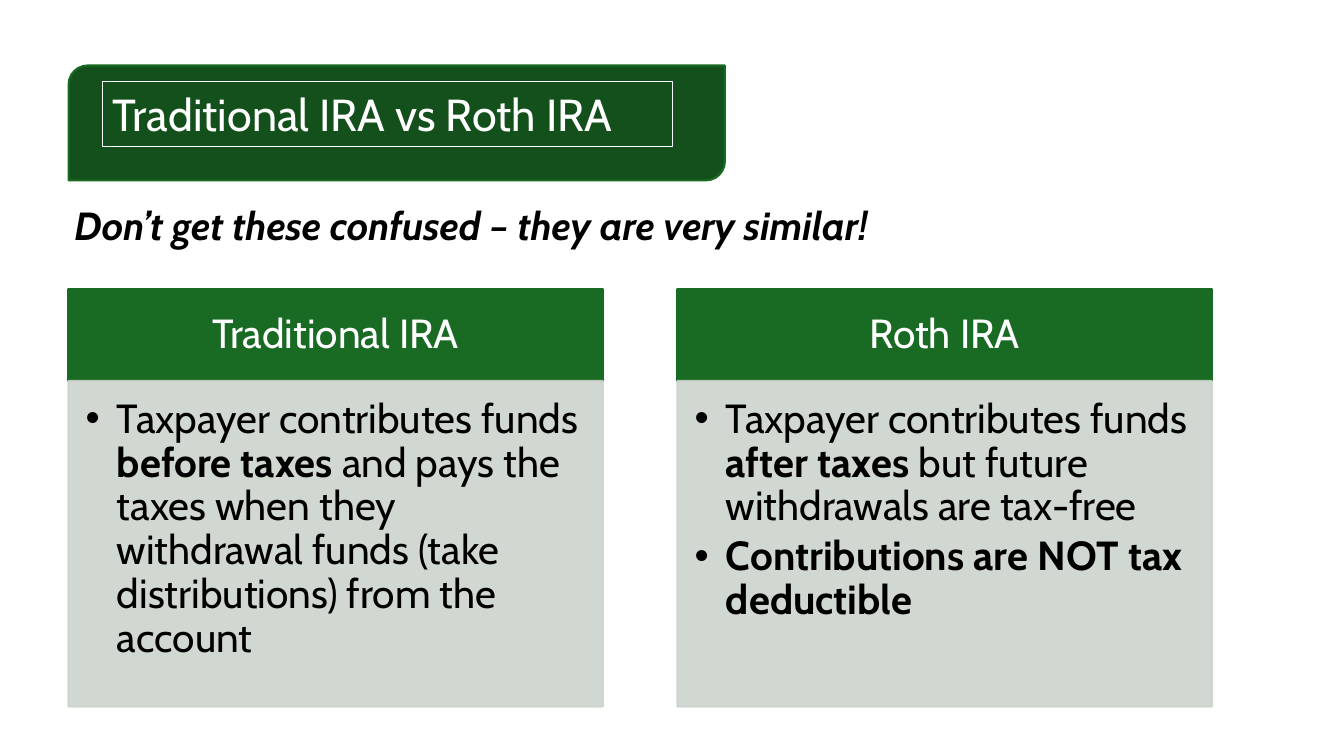
"""Build a slide comparing traditional and Roth IRA accounts."""
from lxml import etree
from pptx import Presentation
from pptx.dml.color import RGBColor
from pptx.enum.shapes import MSO_SHAPE as Preset
from pptx.enum.text import MSO_ANCHOR as Anchor, MSO_AUTO_SIZE as AutoSize, PP_ALIGN as Align
from pptx.oxml.ns import qn
from pptx.util import Emu, Pt

PX = 9144
FONT = "Cabin"
WHITE, BLACK = "FFFFFF", "000000"
DARK_GREEN, GREEN, PALE_GREEN = "13501B", "196B24", "CCD4CD"
COLUMN_LEFT, COLUMN_STEP, COLUMN_WIDTH = 68, 604, 530
HEADER_TOP, HEADER_HEIGHT, PANEL_HEIGHT = 287, 91, 323

COLUMNS = [
    ("Traditional IRA", [
        [("Taxpayer contributes funds ", False), ("before taxes ", True),
         ("and pays the taxes when they withdrawal funds "
          "(take distributions) from the account", False)],
    ]),
    ("Roth IRA", [
        [("Taxpayer contributes funds ", False), ("after taxes ", True),
         ("but future withdrawals are tax-free", False)],
        [("Contributions are NOT tax deductible", True)],
    ]),
]


def px(*lengths):
    return [Emu(length * PX) for length in lengths]


def color(value):
    return RGBColor.from_string(value)


def set_font(paragraph, size, value):
    font = paragraph.font
    font.name, font.size = FONT, Pt(size)
    font.color.rgb = color(value)


def set_line(shape, value, width):
    shape.line.color.rgb = color(value)
    shape.line.width = Pt(width)


def set_frame(frame, insets, anchor):
    frame.word_wrap = True
    frame.auto_size = AutoSize.NONE
    frame.vertical_anchor = anchor
    (frame.margin_left, frame.margin_top,
     frame.margin_right, frame.margin_bottom) = px(*insets)


def add_box(slide, box, fill, line, preset=Preset.RECTANGLE):
    shape = slide.shapes.add_shape(preset, *px(*box))
    shape.shadow.inherit = False
    shape.fill.solid()
    shape.fill.fore_color.rgb = color(fill)
    set_line(shape, line, 1.5)
    return shape


def set_opacity(shape, percent):
    for rgb in shape._element.spPr.iter(qn("a:srgbClr")):
        etree.SubElement(rgb, qn("a:alpha"), val=str(percent * 1000))


def set_bullet(paragraph):
    properties = paragraph._p.get_or_add_pPr()
    properties.set("marL", str(31 * PX))
    properties.set("indent", str(-31 * PX))
    etree.SubElement(properties, qn("a:buFont"), typeface="Arial")
    etree.SubElement(properties, qn("a:buChar"), char="•")


def place_title(slide, text):
    title = slide.shapes.title
    title.left, title.top, title.width, title.height = px(102, 81, 565, 64)
    set_line(title, WHITE, 0.75)
    set_frame(title.text_frame, (10, 5, 10, 5), Anchor.TOP)
    title.text_frame.text = text
    paragraph = title.text_frame.paragraphs[0]
    paragraph.alignment = Align.LEFT
    set_font(paragraph, 32, WHITE)
    slide.shapes._spTree.append(title._element)


def add_header(slide, left, text):
    header = add_box(slide, (left, HEADER_TOP, COLUMN_WIDTH, HEADER_HEIGHT), GREEN, GREEN)
    set_frame(header.text_frame, (23, 13, 23, 13), Anchor.MIDDLE)
    header.text_frame.text = text
    paragraph = header.text_frame.paragraphs[0]
    paragraph.alignment = Align.CENTER
    paragraph.line_spacing = 0.9
    set_font(paragraph, 29, WHITE)


def add_panel(slide, left, points):
    top = HEADER_TOP + HEADER_HEIGHT
    panel = add_box(slide, (left, top, COLUMN_WIDTH, PANEL_HEIGHT), PALE_GREEN, PALE_GREEN)
    set_opacity(panel, 90)
    frame = panel.text_frame
    set_frame(frame, (17, 17, 23, 25), Anchor.TOP)
    for index, runs in enumerate(points):
        paragraph = frame.add_paragraph() if index else frame.paragraphs[0]
        paragraph.alignment = Align.LEFT
        paragraph.line_spacing = 0.9
        paragraph.space_after = Pt(4.35)
        set_bullet(paragraph)
        set_font(paragraph, 29, BLACK)
        for text, bold in runs:
            run = paragraph.add_run()
            run.text = text
            run.font.bold = bold


def add_reminder(slide, text):
    reminder = slide.shapes.add_textbox(*px(64, 195, 1026, 57))
    set_frame(reminder.text_frame, (10, 5, 10, 5), Anchor.TOP)
    reminder.text_frame.text = text
    paragraph = reminder.text_frame.paragraphs[0]
    set_font(paragraph, 28, BLACK)
    paragraph.font.bold = paragraph.font.italic = True


def main():
    presentation = Presentation()
    presentation.slide_width, presentation.slide_height = px(1333, 750)
    slide = presentation.slides.add_slide(presentation.slide_layouts[5])
    add_box(slide, (68, 65, 651, 114), DARK_GREEN, GREEN, Preset.ROUND_2_DIAG_RECTANGLE)
    place_title(slide, "Traditional IRA vs Roth IRA")
    for index, (heading, points) in enumerate(COLUMNS):
        left = COLUMN_LEFT + index * COLUMN_STEP
        add_header(slide, left, heading)
        add_panel(slide, left, points)
    add_reminder(slide, "Don’t get these confused – they are very similar!")
    presentation.save("out.pptx")


if __name__ == "__main__":
    main()
